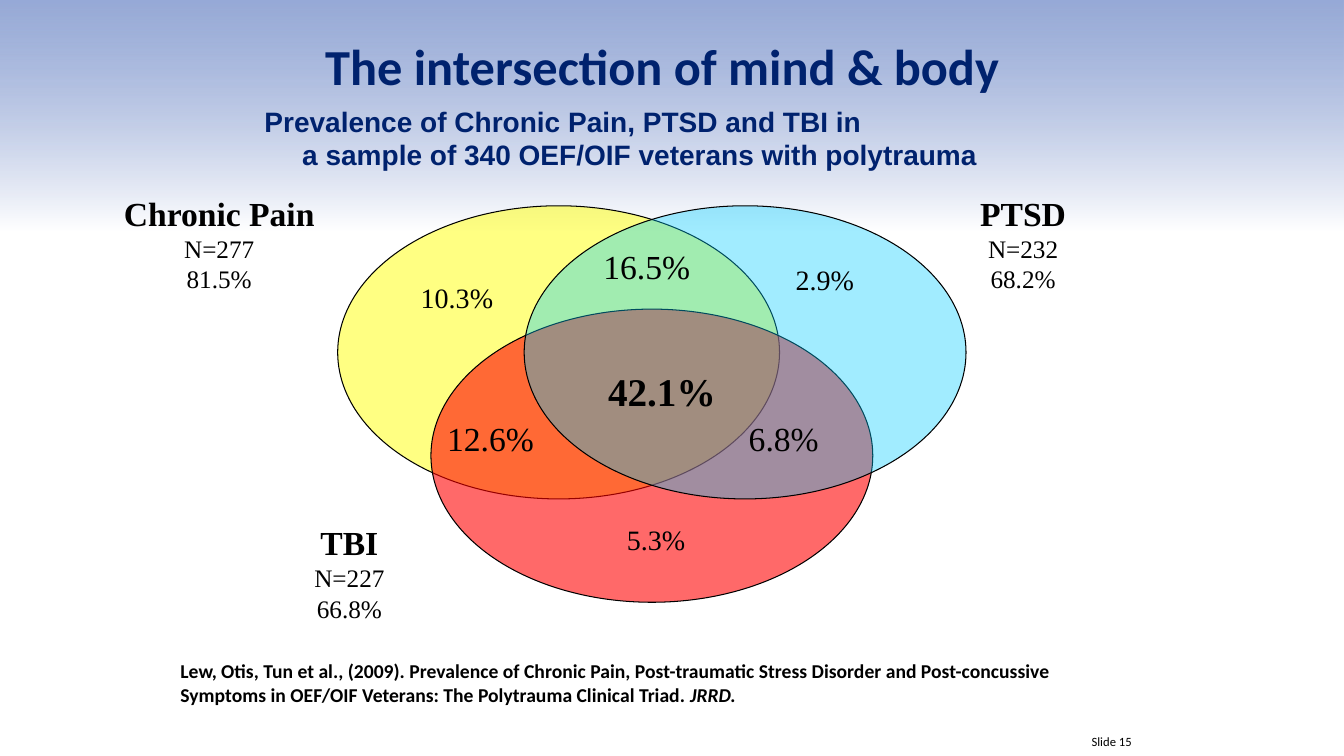
"""Build the polytrauma triad slide: a three-set Venn diagram with labels and a citation."""
import pptx
import pptx.dml.color
import pptx.enum.shapes
import pptx.enum.text
import pptx.oxml
import pptx.oxml.ns
import pptx.util
from dataclasses import dataclass


@dataclass(frozen=True)
class Theme:
    navy: str = "00226E"
    ink: str = "000000"
    white: str = "FFFFFF"
    sky: str = "6A85C5"
    heading: str = "Calibri"
    subheading: str = "Arial"
    serif: str = "Times New Roman"
    title: int = 36
    core: int = 28
    large: int = 24
    medium: int = 20
    normal: int = 18
    citation: int = 14
    footer: int = 9


THEME = Theme()
COLUMNS, ROWS = 160, 90
SLIDE_WIDTH, SLIDE_HEIGHT = pptx.util.Inches(13.33), pptx.util.Inches(7.5)
BAND_ROWS = 40

TITLE = "The intersection of mind & body"
SUBTITLE = [
    ("Prevalence of Chronic Pain, PTSD and TBI in", 14.2),
    ("a sample of 340 OEF/OIF veterans with polytrauma", 18.7),
]
CITATION = (
    "Lew, Otis, Tun et al., (2009). Prevalence of Chronic Pain, Post-traumatic Stress "
    "Disorder and Post-concussive Symptoms in OEF/OIF Veterans: The Polytrauma Clinical Triad. "
)
JOURNAL = "JRRD."
FOOTER = "Slide 15"

VENN_ORIGIN, VENN_STEP, VENN_SIZE = (40.2, 24.5), (11.1, 12.3), (52.6, 34.9)
VENN_SETS = [
    (0, 0, "FFFF00", 49),
    (1, 1, "FF0000", 59),
    (2, 0, "00CCFF", 37),
]
GROUP_SIZE = (27, 14.4)
GROUPS = [
    ("Chronic Pain", "N=277", "81.5%", 26.1, 22.4),
    ("PTSD", "N=232", "68.2%", 121.8, 22.4),
    ("TBI", "N=227", "66.8%", 41.6, 61.6),
]
SHARE_SIZE = (16, 6.1)
SHARES = [
    ("10.3%", 54.4, 32.8, THEME.medium, False),
    ("16.5%", 77, 28.7, THEME.large, False),
    ("2.9%", 98.2, 30.7, THEME.medium, False),
    ("12.6%", 58.4, 49.2, THEME.large, False),
    ("42.1%", 78.8, 43.1, THEME.core, True),
    ("6.8%", 93.3, 49.2, THEME.large, False),
    ("5.3%", 78.1, 61.6, THEME.medium, False),
]

ALIGN = pptx.enum.text.PP_ALIGN
SHAPE = pptx.enum.shapes.MSO_SHAPE


def across(columns):
    return round(SLIDE_WIDTH * columns / COLUMNS)


def down(rows):
    return round(SLIDE_HEIGHT * rows / ROWS)


def rgb(value):
    return pptx.dml.color.RGBColor.from_string(value)


def set_opacity(shape, color, percent):
    for node in shape.element.spPr.iter(pptx.oxml.ns.qn("a:srgbClr")):
        if node.get("val") == color:
            alpha = pptx.oxml.parse_xml(
                f'<a:alpha {pptx.oxml.ns.nsdecls("a")} val="{percent * 1000}"/>')
            node.append(alpha)


def add_shape(page, kind, left, top, width, height):
    shape = page.shapes.add_shape(kind, across(left), down(top), across(width), down(height))
    shape.shadow.inherit = False
    return shape


def add_box(page, left, top, width, height, middle=False):
    box = page.shapes.add_textbox(across(left), down(top), across(width), down(height))
    box.text_frame.word_wrap = True
    if middle:
        box.text_frame.vertical_anchor = pptx.enum.text.MSO_ANCHOR.MIDDLE
    return box


def add_span(para, text, size, font, color=THEME.ink, bold=False, italic=False):
    span = para.add_run()
    span.text = text
    span.font.size = pptx.util.Pt(size)
    span.font.name = font
    span.font.bold = bold
    span.font.italic = italic
    span.font.color.rgb = rgb(color)


def write(box, text, align=ALIGN.CENTER, indent=0, **style):
    para = box.text_frame.paragraphs[-1]
    if para.runs:
        para = box.text_frame.add_paragraph()
    para.alignment = align
    if indent:
        properties = para._p.get_or_add_pPr()
        properties.set("marL", str(across(indent)))
        properties.set("indent", "0")
    add_span(para, text, **style)
    return para


def draw_band(page):
    band = add_shape(page, SHAPE.RECTANGLE, 0, 0, COLUMNS, BAND_ROWS)
    band.fill.gradient()
    band.fill.gradient_angle = 90
    for stop, position, color in zip(
            band.fill.gradient_stops, (0.31, 0.99), (THEME.white, THEME.sky)):
        stop.position = position
        stop.color.rgb = rgb(color)
    set_opacity(band, THEME.sky, 69)
    band.line.fill.background()


def draw_venn(page):
    for column, row, color, opacity in VENN_SETS:
        left = VENN_ORIGIN[0] + column * VENN_STEP[0]
        top = VENN_ORIGIN[1] + row * VENN_STEP[1]
        ellipse = add_shape(page, SHAPE.OVAL, left, top, *VENN_SIZE)
        ellipse.fill.solid()
        ellipse.fill.fore_color.rgb = rgb(color)
        set_opacity(ellipse, color, opacity)
        ellipse.line.color.rgb = rgb(THEME.ink)
        ellipse.line.width = pptx.util.Pt(0.75)


def draw_labels(page):
    for name, count, percent, center, top in GROUPS:
        box = add_box(page, center - GROUP_SIZE[0] / 2, top, *GROUP_SIZE)
        write(box, name, size=THEME.large, font=THEME.serif, bold=True)
        for text in (count, percent):
            write(box, text, size=THEME.normal, font=THEME.serif)
    for text, center, top, size, bold in SHARES:
        box = add_box(page, center - SHARE_SIZE[0] / 2, top, *SHARE_SIZE)
        write(box, text, size=size, font=THEME.serif, bold=bold)


def draw_texts(page):
    title = add_box(page, 11, 3.6, 135.7, 9.4)
    write(title, TITLE, size=THEME.title, font=THEME.heading, color=THEME.navy, bold=True)
    subtitle = add_box(page, 16.1, 11.8, 119.2, 13.3)
    for text, indent in SUBTITLE:
        write(subtitle, text, align=ALIGN.LEFT, indent=indent, size=THEME.medium,
              font=THEME.subheading, color=THEME.navy, bold=True)
    citation = add_box(page, 20.3, 77.9, 111, 6.8)
    style = dict(size=THEME.citation, font=THEME.heading, bold=True)
    para = write(citation, CITATION, align=ALIGN.LEFT, **style)
    add_span(para, JOURNAL, italic=True, **style)
    footer = add_box(page, 115.3, 87.1, 20.6, 2.3, middle=True)
    write(footer, FOOTER, align=ALIGN.RIGHT, size=THEME.footer, font=THEME.heading)


def main():
    deck = pptx.Presentation()
    deck.slide_width, deck.slide_height = SLIDE_WIDTH, SLIDE_HEIGHT
    page = deck.slides.add_slide(deck.slide_layouts[6])
    draw_band(page)
    draw_venn(page)
    draw_labels(page)
    draw_texts(page)
    deck.save("out.pptx")


if __name__ == "__main__":
    main()
